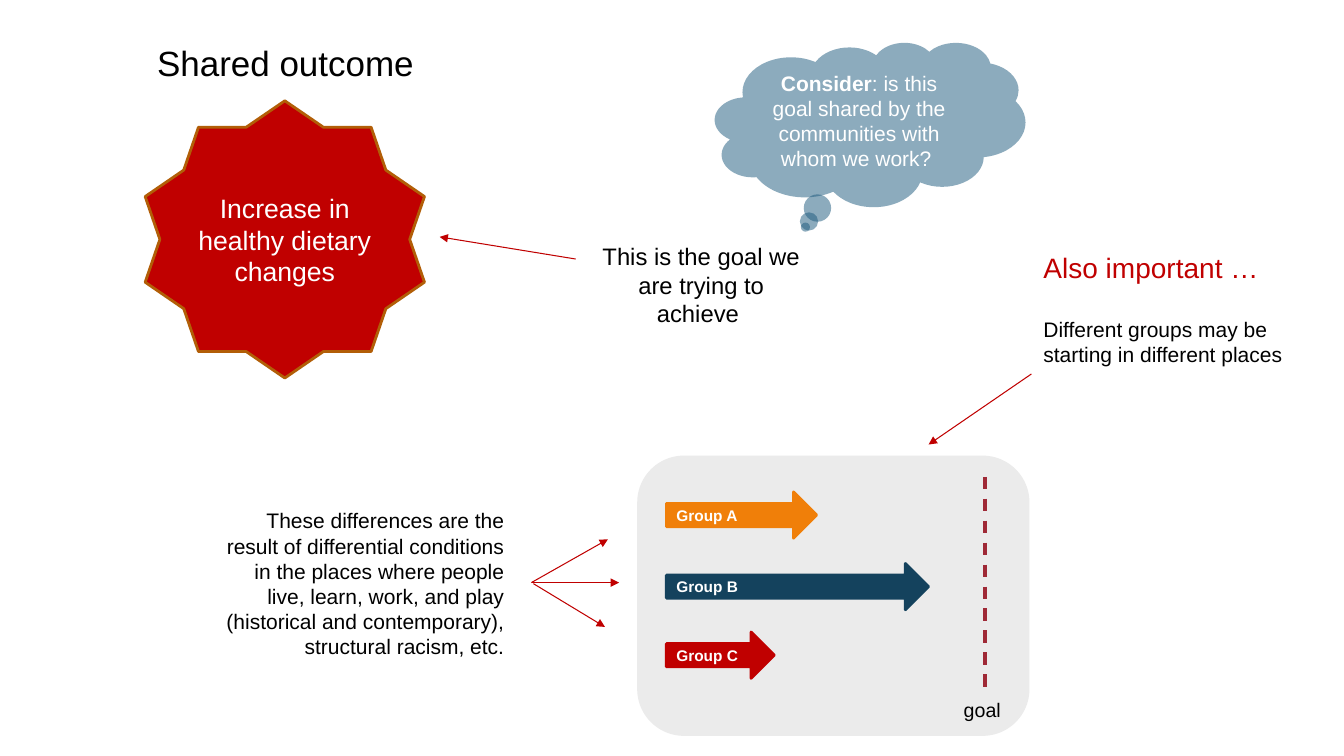
"""Build the shared outcome slide with its group progress panel."""
from lxml.etree import SubElement
from pptx import Presentation
from pptx.dml.color import RGBColor
from pptx.enum.dml import MSO_LINE
from pptx.enum.shapes import MSO_CONNECTOR, MSO_SHAPE
from pptx.enum.text import MSO_ANCHOR, PP_ALIGN
from pptx.oxml.ns import qn
from pptx.util import Inches, Pt

RED = RGBColor(0xC0, 0x00, 0x00)
BROWN = RGBColor(0xB2, 0x5E, 0x07)
STEEL = RGBColor(0x1B, 0x58, 0x7C)
GRAY = RGBColor(0xEB, 0xEB, 0xEB)
ORANGE = RGBColor(0xF0, 0x7F, 0x09)
NAVY = RGBColor(0x14, 0x42, 0x5D)
MAROON = RGBColor(0x9F, 0x29, 0x36)
BLACK = RGBColor(0x00, 0x00, 0x00)
WHITE = RGBColor(0xFF, 0xFF, 0xFF)

PANEL_GROUPS = [
    ("Group A", 4.88, 1.49, ORANGE),
    ("Group B", 5.59, 2.6, NAVY),
    ("Group C", 6.27, 1.07, RED),
]
POINTERS = [
    ((5.71, 2.57), (4.36, 2.35)),
    ((10.23, 3.71), (9.21, 4.41)),
    ((5.28, 5.78), (6.14, 5.78)),
    ((5.27, 5.78), (6.03, 5.35)),
    ((5.29, 5.79), (6, 6.22)),
]


def style(item, size, color, bold=False):
    """Set the font of a paragraph or run."""
    item.font.name = "Arial"
    item.font.size = Pt(size)
    item.font.color.rgb = color
    item.font.bold = bold


def add_text(shapes, box, text, size, align=PP_ALIGN.LEFT):
    """Add a wrapping text box with one black paragraph."""
    tf = shapes.add_textbox(*map(Inches, box)).text_frame
    tf.word_wrap = True
    tf.text = text
    p = tf.paragraphs[0]
    p.alignment = align
    for r in p.runs:
        style(r, size, BLACK)
    return tf


def add_shape(shapes, kind, box, fill, line=None, text="", size=11,
              align=PP_ALIGN.CENTER, bold=False):
    """Add a filled preset shape with white text."""
    sp = shapes.add_shape(kind, *map(Inches, box))
    sp.shadow.inherit = False
    sp.fill.solid()
    sp.fill.fore_color.rgb = fill
    if line is None:
        sp.line.fill.background()
    else:
        sp.line.color.rgb = line
        sp.line.width = Pt(2)
    tf = sp.text_frame
    tf.word_wrap = True
    tf.vertical_anchor = MSO_ANCHOR.MIDDLE
    tf.text = text
    p = tf.paragraphs[0]
    p.alignment = align
    for r in p.runs:
        style(r, size, WHITE, bold)
    return sp


def add_line(shapes, start, end, color, width):
    """Add a straight connector without a shadow."""
    c = shapes.add_connector(MSO_CONNECTOR.STRAIGHT, *map(Inches, start + end))
    c.line.color.rgb = color
    c.line.width = Pt(width)
    SubElement(c._element.spPr, qn("a:effectLst"))
    return c


def add_pointer(shapes, start, end):
    """Add a thin red arrow."""
    c = add_line(shapes, start, end, RED, 0.75)
    SubElement(c.line._get_or_add_ln(), qn("a:tailEnd"), type="triangle")


def add_thought(shapes):
    """Add the half-transparent thought cloud."""
    sp = add_shape(shapes, MSO_SHAPE.CLOUD_CALLOUT, (7.09, 0.42, 3.08, 1.63),
                   STEEL, text="Consider", size=15, bold=True)
    r = sp.text_frame.paragraphs[0].add_run()
    r.text = ": is this goal shared by the communities with whom we work? "
    style(r, 15, WHITE)
    color = sp._element.spPr.find(qn("a:solidFill"))[0]
    SubElement(color, qn("a:alpha"), val="50000")


def add_side_note(shapes):
    """Add the note with a red heading."""
    tf = add_text(shapes, (10.25, 2.44, 3.08, 1.28), "Also important …", 20)
    tf.paragraphs[0].runs[0].font.color.rgb = RED
    p = tf.add_paragraph()
    p.text = "Different groups may be starting in different places"
    p.space_before = Pt(23)
    style(p.runs[0], 15, BLACK)


def add_panel(shapes):
    """Add the grouped panel of arrows heading for the goal line."""
    panel = shapes.add_group_shape().shapes
    add_shape(panel, MSO_SHAPE.ROUNDED_RECTANGLE, (6.32, 4.52, 3.89, 2.78), GRAY)
    for name, top, width, color in PANEL_GROUPS:
        add_shape(panel, MSO_SHAPE.RIGHT_ARROW, (6.61, top, width, 0.46), color,
                  color, name, align=PP_ALIGN.LEFT, bold=True)
    goal = add_line(panel, (9.77, 4.73), (9.77, 6.84), MAROON, 2.25)
    goal.line.dash_style = MSO_LINE.DASH
    add_text(panel, (9.46, 6.87, 0.62, 0.34), "goal", 14)


def main():
    """Build and save the slide."""
    prs = Presentation()
    prs.slide_width, prs.slide_height = Inches(13.33), Inches(7.5)
    shapes = prs.slides.add_slide(prs.slide_layouts[6]).shapes
    add_shape(shapes, MSO_SHAPE.STAR_10_POINT, (1.44, 1, 2.77, 2.75), RED, BROWN,
              "Increase in healthy dietary changes", 19)
    add_text(shapes, (1.15, 0.36, 3.36, 0.52), "Shared outcome", 25,
             PP_ALIGN.CENTER)
    add_text(shapes, (5.83, 2.35, 2.25, 0.96),
             "This is the goal we are trying to achieve ", 17, PP_ALIGN.CENTER)
    add_side_note(shapes)
    add_text(shapes, (2.1, 4.99, 3, 1.62),
             "These differences are the result of differential conditions in the "
             "places where people live, learn, work, and play (historical and "
             "contemporary), structural racism, etc.", 15, PP_ALIGN.RIGHT)
    for start, end in POINTERS:
        add_pointer(shapes, start, end)
    add_thought(shapes)
    add_panel(shapes)
    prs.save("out.pptx")


if __name__ == "__main__":
    main()
